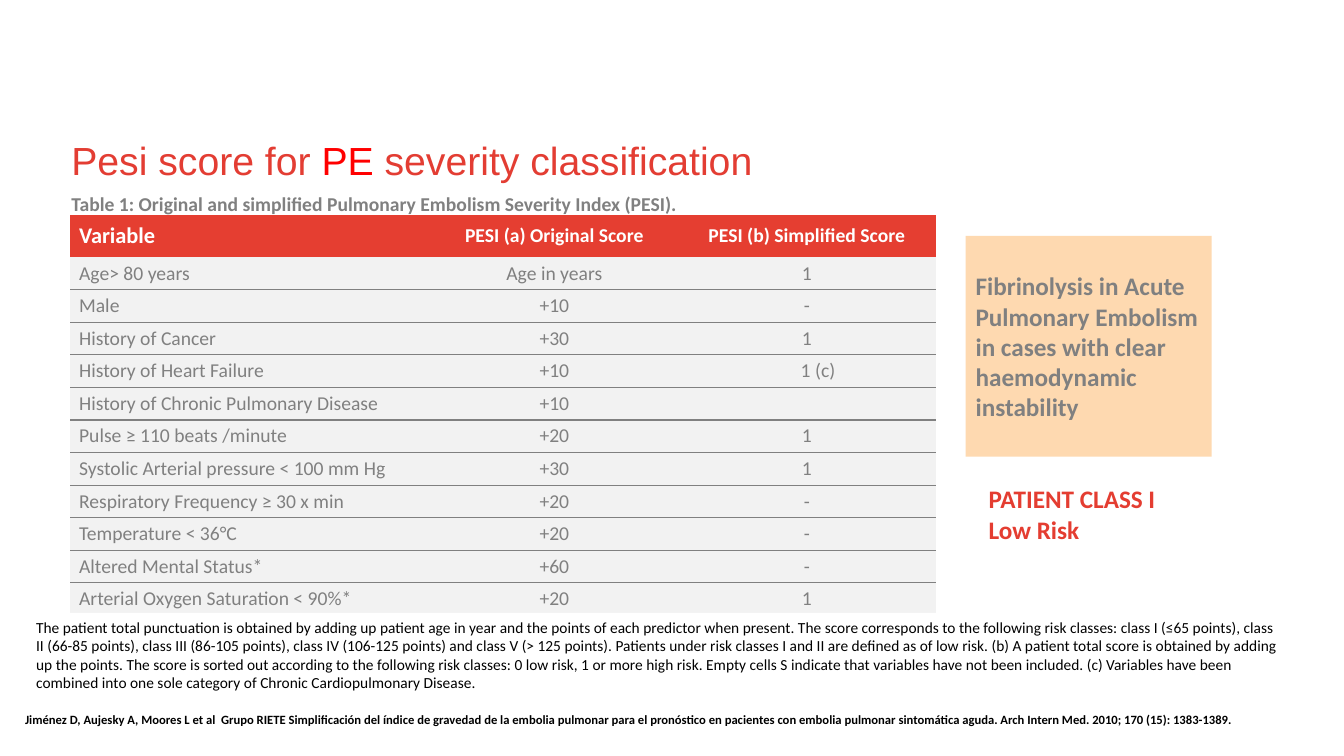
"""Build the PESI score slide with its table, side notes and reference."""
from dataclasses import dataclass

from lxml.etree import SubElement
from pptx import Presentation
from pptx.dml.color import RGBColor
from pptx.enum.shapes import MSO_SHAPE
from pptx.enum.text import MSO_ANCHOR, PP_ALIGN
from pptx.oxml import parse_xml
from pptx.oxml.ns import nsdecls, qn
from pptx.util import Pt

RED, GREY, WHITE, BLACK = "E53E31", "808080", "FFFFFF", "000000"
NO_STYLE = "{2D5ABB26-0587-4C30-8999-92F81FD0307C}"


@dataclass
class Run:
    text: str
    color: str


@dataclass
class Box:
    left: float
    top: float
    width: float
    height: float
    paragraphs: list[list[Run]]
    size: float
    bold: bool = True
    font: str = "Calibri"
    fill: str = ""
    anchor: MSO_ANCHOR = MSO_ANCHOR.TOP


@dataclass
class ScoreRow:
    variable: str
    original: str
    simplified: str
    indent: float = 0


TITLE = Box(43.9, 93.6, 864, 56.2, [[
    Run("Pesi score for ", "E33D33"), Run("PE ", "FF0000"),
    Run("severity classification", "E33D33")]], 28, False, "Arial")
CAPTION = Box(43.9, 133.2, 864, 41.8, [[Run(
    "Table 1: Original and simplified Pulmonary Embolism Severity Index (PESI).", GREY)]], 14)
PATIENT_CLASS = Box(699.1, 342, 175.7, 51.1, [
    [Run("PATIENT CLASS I", "E43D31")], [Run("Low Risk", "E43D31")]], 18, fill=WHITE)
FIBRINOLYSIS = Box(689.8, 168.5, 175.7, 157.7, [
    [Run("Fibrinolysis in Acute Pulmonary Embolism", GREY)],
    [Run("in cases with clear haemodynamic instability", GREY)]],
    18, fill="FED9B0", anchor=MSO_ANCHOR.MIDDLE)
FOOTNOTE = Box(18.7, 437.8, 906.5, 73.4, [[Run(
    "The patient total punctuation is obtained by adding up patient age in year and the points "
    "of each predictor when present. The score corresponds to the following risk classes: "
    "class I (≤65 points), class II (66-85 points), class III (86-105 points), class IV "
    "(106-125 points) and class V (> 125 points). Patients under risk classes I and II are "
    "defined as of low risk. (b) A patient total score is obtained by adding up the points. "
    "The score is sorted out according to the following risk classes: 0 low risk, 1 or more "
    "high risk. Empty cells S indicate that variables have not been included. (c) Variables "
    "have been combined into one sole category of Chronic Cardiopulmonary Disease.", BLACK)]],
    11, False, fill=WHITE)
REFERENCE = Box(10.8, 504.7, 913, 18, [[Run(
    "Jiménez D, Aujesky A, Moores L et al  Grupo RIETE Simplificación del índice de gravedad "
    "de la embolia pulmonar para el pronóstico en pacientes con embolia pulmonar sintomática "
    "aguda. Arch Intern Med. 2010; 170 (15): 1383-1389.", BLACK)]], 9)

SCORES = [
    ScoreRow("Variable", "PESI (a) Original Score", "PESI (b) Simplified Score"),
    ScoreRow("Age> 80 years", "Age in years", "1"),
    ScoreRow("Male", "+10", "-"),
    ScoreRow("History of Cancer", "+30", "1"),
    ScoreRow("History of Heart Failure", "+10", "1 (c)", indent=16),
    ScoreRow("History of Chronic Pulmonary Disease", "+10", ""),
    ScoreRow("Pulse ≥ 110 beats /minute", "+20", "1"),
    ScoreRow("Systolic Arterial pressure < 100 mm Hg", "+30", "1"),
    ScoreRow("Respiratory Frequency ≥ 30 x min", "+20", "-"),
    ScoreRow("Temperature < 36°C", "+20", "-"),
    ScoreRow("Altered Mental Status*", "+60", "-"),
    ScoreRow("Arterial Oxygen Saturation < 90%*", "+20", "1"),
]
COLUMN_WIDTHS = [257.8, 176.4, 184.3]
HEADER_HEIGHT, ROW_HEIGHT = 30.2, 23.3


def rgb(color: str) -> RGBColor:
    """Turn a hex string into a colour."""
    return RGBColor.from_string(color)


def style_run(r, size: float, color: str, bold: bool, font: str = "Calibri") -> None:
    """Set the font of one run."""
    r.font.name, r.font.size, r.font.bold = font, Pt(size), bold
    r.font.color.rgb = rgb(color)


def add_box(slide, box: Box) -> None:
    """Draw a text box, or a filled rectangle when the box has a fill."""
    place = Pt(box.left), Pt(box.top), Pt(box.width), Pt(box.height)
    if box.fill:
        sp = slide.shapes.add_shape(MSO_SHAPE.RECTANGLE, *place)
        sp.shadow.inherit = False
        sp.fill.solid()
        sp.fill.fore_color.rgb = rgb(box.fill)
        sp.line.fill.background()
    else:
        sp = slide.shapes.add_textbox(*place)
    tf = sp.text_frame
    tf.word_wrap = True
    tf.vertical_anchor = box.anchor
    for i, runs in enumerate(box.paragraphs):
        p = tf.add_paragraph() if i else tf.paragraphs[0]
        p.alignment = PP_ALIGN.LEFT
        for run in runs:
            r = p.add_run()
            r.text = run.text
            style_run(r, box.size, run.color, box.bold, box.font)


def add_bottom_border(cell) -> None:
    """Draw a thin grey line under a cell."""
    cell._tc.get_or_add_tcPr().insert(0, parse_xml(
        f'<a:lnB {nsdecls("a")} w="12700"><a:solidFill><a:srgbClr val="{GREY}"/>'
        '</a:solidFill></a:lnB>'))


def fill_cell(cell, text: str, size: float, header: bool, centred: bool) -> None:
    """Write and format one table cell."""
    cell.fill.solid()
    cell.fill.fore_color.rgb = rgb(RED if header else "F2F2F2")
    cell.vertical_anchor = MSO_ANCHOR.MIDDLE
    cell.margin_left = cell.margin_right = Pt(6.5)
    cell.margin_top = cell.margin_bottom = Pt(3)
    p = cell.text_frame.paragraphs[0]
    p.text = text
    p.alignment = PP_ALIGN.CENTER if centred else PP_ALIGN.LEFT
    for r in p.runs:
        style_run(r, size, WHITE if header else GREY, header)
    if not text:
        SubElement(p._p, qn("a:endParaRPr"), sz=str(size * 100))
    if not header:
        add_bottom_border(cell)


def add_score_table(slide) -> None:
    """Draw the table of original and simplified scores."""
    height = HEADER_HEIGHT + ROW_HEIGHT * (len(SCORES) - 1)
    frame = slide.shapes.add_table(len(SCORES), len(COLUMN_WIDTHS), Pt(50), Pt(153.4),
                                   Pt(sum(COLUMN_WIDTHS)), Pt(height))
    table = frame.table
    table.horz_banding = False
    table._tbl.tblPr.find(qn("a:tableStyleId")).text = NO_STYLE
    for column, width in zip(table.columns, COLUMN_WIDTHS):
        column.width = Pt(width)
    for i, score in enumerate(SCORES):
        header = i == 0
        table.rows[i].height = Pt(HEADER_HEIGHT if header else ROW_HEIGHT)
        for j, text in enumerate((score.variable, score.original, score.simplified)):
            size = 16 if header and j == 0 else 14
            fill_cell(table.cell(i, j), text, size, header, j > 0)
        table.cell(i, 2).margin_left = Pt(6.5 + score.indent)


def main() -> None:
    """Build and save the slide."""
    prs = Presentation()
    prs.slide_width, prs.slide_height = Pt(960), Pt(540)
    s = prs.slides.add_slide(prs.slide_layouts[6])
    for box in (TITLE, CAPTION, PATIENT_CLASS, FIBRINOLYSIS):
        add_box(s, box)
    add_score_table(s)
    for box in (FOOTNOTE, REFERENCE):
        add_box(s, box)
    prs.save("out.pptx")


if __name__ == "__main__":
    main()
